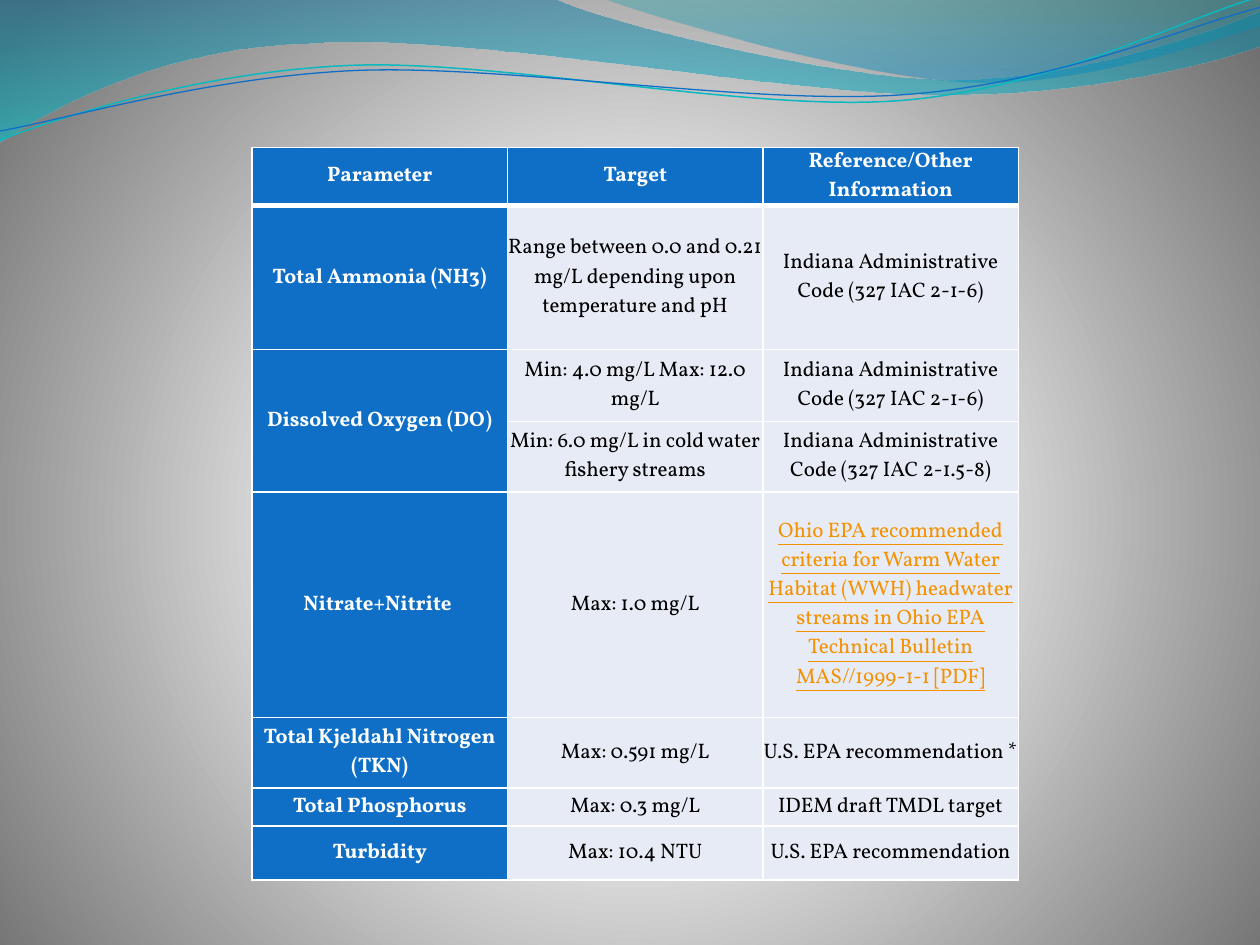
from math import cos, radians, sin

from lxml import etree
from pptx import Presentation
from pptx.dml.color import RGBColor
from pptx.enum.text import MSO_ANCHOR as Anchor, PP_ALIGN as Align
from pptx.oxml import parse_xml
from pptx.oxml.ns import nsdecls, qn
from pptx.util import Cm, Pt

WHITE = RGBColor(0xFF, 0xFF, 0xFF)
BLACK = RGBColor(0, 0, 0)
BLUE = RGBColor(0x0F, 0x6F, 0xC6)
TEAL = RGBColor(0x0A, 0xB8, 0xBF)
PALE = RGBColor(0xE7, 0xEB, 0xF5)
ORANGE = RGBColor(0xF4, 0x91, 0x00)
GREY = RGBColor(0x70, 0x70, 0x70)
DEEP_BLUE = RGBColor(0x00, 0x74, 0xA1)
AQUA = RGBColor(0x00, 0xC6, 0xCF)
SEA = RGBColor(0x00, 0xA1, 0xA9)
SKY = RGBColor(0x00, 0x8B, 0xBF)
FONT = "Vollkorn"

# Table content; None continues the merged cell above
ROWS = [
    ("Parameter", "Target", "Reference/Other Information"),
    ("Total Ammonia (NH3)",
     "Range between 0.0 and 0.21 mg/L depending upon temperature and pH",
     "Indiana Administrative Code (327 IAC 2-1-6)"),
    ("Dissolved Oxygen (DO)", "Min: 4.0 mg/L Max: 12.0 mg/L",
     "Indiana Administrative Code (327 IAC 2-1-6)"),
    (None, "Min: 6.0 mg/L in cold water fishery streams",
     "Indiana Administrative Code (327 IAC 2-1.5-8)"),
    ("Nitrate+Nitrite ", "Max: 1.0 mg/L",
     "Ohio EPA recommended criteria for Warm Water Habitat (WWH) headwater "
     "streams in Ohio EPA Technical Bulletin MAS//1999-1-1 [PDF]"),
    ("Total Kjeldahl Nitrogen (TKN)", "Max: 0.591 mg/L", "U.S. EPA recommendation *"),
    ("Total Phosphorus", "Max: 0.3 mg/L", "IDEM draft TMDL target"),
    ("Turbidity", "Max: 10.4 NTU", "U.S. EPA recommendation"),
]
ROW_HEIGHTS = [1.14, 2.9, 1.45, 1.42, 4.55, 1.42, 0.76, 1.09]
COLUMN_WIDTH = 5.15
TABLE_LEFT, TABLE_TOP = 5.08, 2.97
LINK_CELL = (4, 2)

# Waves in cm: a start point, then steps of one point (line) or three (curve)
BANDS = [
    ([(0, 0)],
     [[(11.18, -0.03)],
      [(12.09, 0.43), (16.87, 1.6), (19.25, 1.6)],
      [(21.67, 1.6), (24.33, 0.66), (25.4, 0.23)],
      [(25.43, 0.91)],
      [(24.97, 1.12), (22.1, 1.93), (18.95, 1.91)],
      [(15.8, 1.91), (9.7, 0.71), (6.53, 0.86)],
      [(3.28, 0.91), (1.17, 2.11), (-0.03, 2.87)]],
     [(0, DEEP_BLUE, 45), (1, AQUA, 55)]),
    ([(12.17, -0.03)],
     [[(12.93, 0.28), (17.32, 1.57), (19.53, 1.65)],
      [(21.74, 1.75), (24.41, 0.81), (25.4, 0.53)],
      [(25.4, 0)]],
     [(0, SEA, 30), (0.8, SKY, 45)]),
]
STRANDS = [
    ([(0, 2.82)],
     [[(1.22, 2.36), (4.01, 1.45), (7.04, 1.32)],
      [(10.03, 1.19), (15.06, 2.26), (18.11, 2.03)],
      [(21.16, 1.8), (23.83, 0.38), (25.35, -0.05)]],
     TEAL, 0.85),
    ([(0, 2.64)],
     [[(1.19, 2.44), (4.17, 1.55), (7.19, 1.42)],
      [(10.24, 1.3), (15.16, 2.13), (18.21, 1.91)],
      [(21.23, 1.7), (23.9, 0.53), (25.4, 0.15)]],
     BLUE, 0.75),
]
STRAND_TILT = 2.7
STRAND_CENTRE = (12.68, 1.48)


def level(point):
    """Turn a point of a tilted strand back to the horizontal."""
    angle = radians(STRAND_TILT)
    x, y = point[0] - STRAND_CENTRE[0], point[1] - STRAND_CENTRE[1]
    return (STRAND_CENTRE[0] + x * cos(angle) - y * sin(angle),
            STRAND_CENTRE[1] + x * sin(angle) + y * cos(angle))


def add_wave(page, start, steps, close):
    """Build an outline, then join each three-point step into a Bezier curve."""
    points = [(Cm(x), Cm(y)) for step in steps for x, y in step]
    builder = page.shapes.build_freeform(Cm(start[0]), Cm(start[1]), scale=1.0)
    builder.add_line_segments(points, close=close)
    wave = builder.convert_to_shape()
    wave.shadow.inherit = False
    segments = iter(list(wave.element.iter(qn("a:lnTo"))))
    for step in steps:
        group = [next(segments) for _ in step]
        if len(group) == 3:
            group[0].tag = qn("a:cubicBezTo")
            for segment in group[1:]:
                group[0].append(segment[0])
                segment.getparent().remove(segment)
    return wave


def add_border(cell, side, width):
    cell_props = cell._tc.get_or_add_tcPr()
    cell_props.append(parse_xml(
        f'<a:ln{side} {nsdecls("a")} w="{Pt(width)}"><a:solidFill>'
        f'<a:srgbClr val="{WHITE}"/></a:solidFill></a:ln{side}>'))


def fill_cell(cell, text, row, column):
    strong = row == 0 or column == 0
    for side in "LRTB":
        heavy = (row, side) in ((0, "B"), (1, "T"))
        add_border(cell, side, 3 if heavy else 1)
    cell.fill.solid()
    cell.fill.fore_color.rgb = BLUE if strong else PALE
    cell.margin_left = cell.margin_right = cell.margin_top = cell.margin_bottom = 0
    cell.vertical_anchor = Anchor.MIDDLE
    if text is None:
        return
    para = cell.text_frame.paragraphs[0]
    para.alignment = Align.CENTER
    span = para.add_run()
    span.text = text
    font = span.font
    font.name, font.size, font.bold = FONT, Pt(12), strong
    font.color.rgb = WHITE if strong else BLACK
    if (row, column) == LINK_CELL:
        font.color.rgb = ORANGE
        font.underline = True


deck = Presentation()
deck.slide_width, deck.slide_height = Cm(25.4), Cm(19.05)
page = deck.slides.add_slide(deck.slide_layouts[6])

# Background: radial gradient
page.background.fill.gradient()
gradient = page.background._cSld.find(".//" + qn("a:gradFill"))
for child in list(gradient):
    gradient.remove(child)
stops = etree.SubElement(gradient, qn("a:gsLst"))
for position, colour in [(0, WHITE), (25, WHITE), (100, GREY)]:
    stop = etree.SubElement(stops, qn("a:gs"), pos=str(position * 1000))
    etree.SubElement(stop, qn("a:srgbClr"), val=str(colour))
circle = etree.SubElement(gradient, qn("a:path"))
circle.set("path", "circle")
etree.SubElement(circle, qn("a:fillToRect"), l="10000", t="110000", r="10000", b="100000")

# Translucent bands
for (start,), steps, colours in BANDS:
    band = add_wave(page, start, steps, close=True)
    band.line.fill.background()
    band.fill.gradient()
    band.fill.gradient_angle = 270
    for stop, (position, colour, opacity) in zip(band.fill.gradient_stops, colours):
        stop.position = position
        stop.color.rgb = colour
    for tint, (_, _, opacity) in zip(band.element.spPr.iter(qn("a:srgbClr")), colours):
        etree.SubElement(tint, qn("a:alpha"), val=str(opacity * 1000))

# Thin strands
for (start,), steps, colour, width in STRANDS:
    flat_steps = [[level(point) for point in step] for step in steps]
    strand = add_wave(page, level(start), flat_steps, close=False)
    strand.rotation = 360 - STRAND_TILT
    strand.fill.background()
    strand.line.color.rgb = colour
    strand.line.width = Pt(width)

# Table of targets
columns = len(ROWS[0])
table = page.shapes.add_table(
    len(ROWS), columns, Cm(TABLE_LEFT), Cm(TABLE_TOP),
    Cm(COLUMN_WIDTH * columns), Cm(sum(ROW_HEIGHTS))).table
table.horz_banding = False
for table_column in table.columns:
    table_column.width = Cm(COLUMN_WIDTH)
for table_row, height in zip(table.rows, ROW_HEIGHTS):
    table_row.height = Cm(height)
for row, texts in enumerate(ROWS):
    for column, text in enumerate(texts):
        fill_cell(table.cell(row, column), text, row, column)
        if text is None:
            table.cell(row - 1, column).merge(table.cell(row, column))

deck.save("out.pptx")
